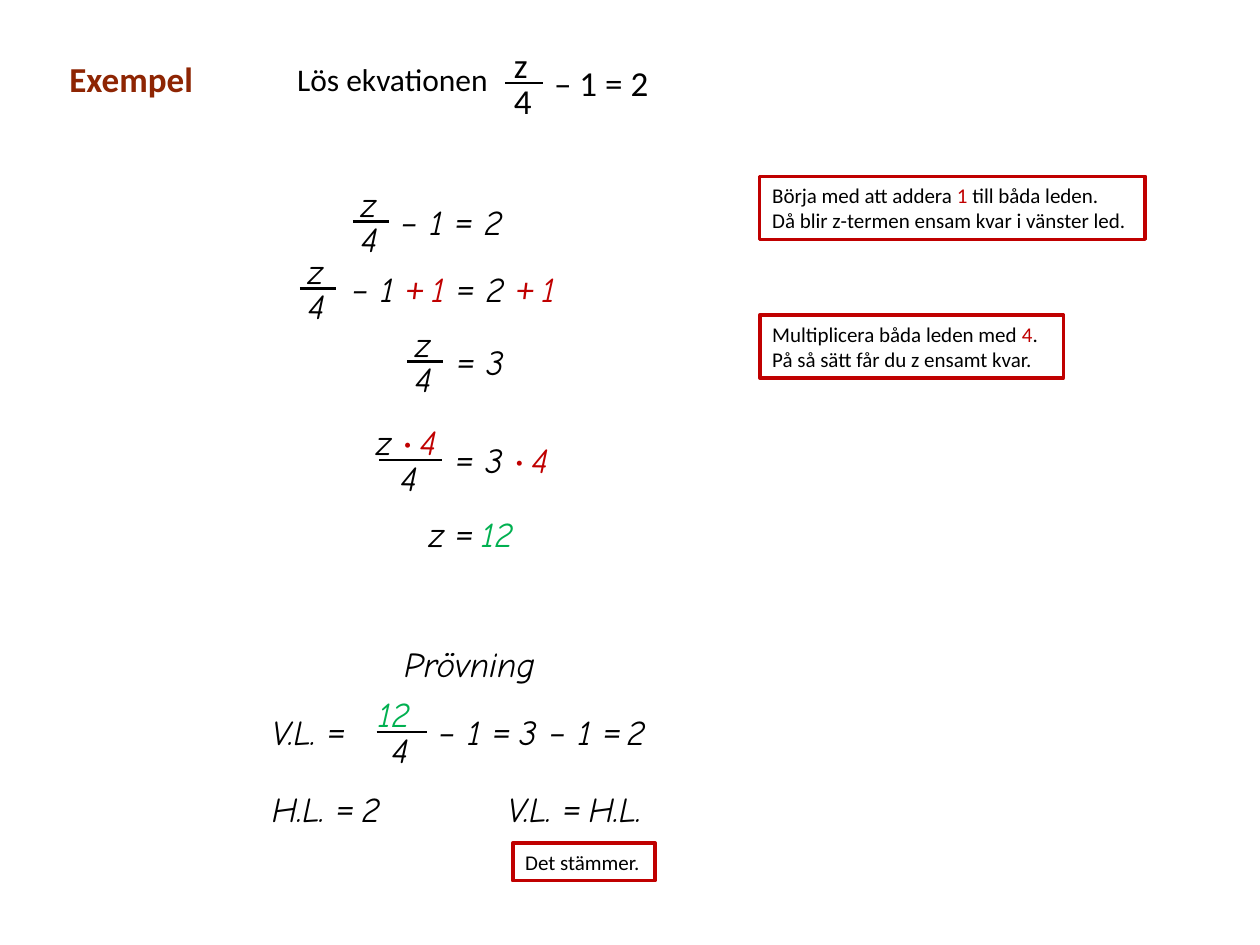
from dataclasses import dataclass

from lxml import etree
from pptx import Presentation
from pptx.dml.color import RGBColor
from pptx.enum.shapes import MSO_CONNECTOR, MSO_SHAPE
from pptx.enum.text import MSO_ANCHOR, MSO_AUTO_SIZE, PP_ALIGN
from pptx.oxml.ns import qn
from pptx.util import Inches, Pt

STRAIGHT = MSO_CONNECTOR.STRAIGHT
RECTANGLE = MSO_SHAPE.RECTANGLE
TOP = MSO_ANCHOR.TOP
LEFT = PP_ALIGN.LEFT
GROW = MSO_AUTO_SIZE.SHAPE_TO_FIT_TEXT
TITLE_ONLY = 5
OPERATORS = "–+=·"


@dataclass(frozen=True)
class Theme:
    ink: RGBColor = RGBColor(0, 0, 0)
    paper: RGBColor = RGBColor(255, 255, 255)
    heading: RGBColor = RGBColor(0x8E, 0x25, 0x03)
    change: RGBColor = RGBColor(0xC0, 0, 0)
    answer: RGBColor = RGBColor(0, 0xB0, 0x50)
    print_font: str = "Calibri"
    hand_font: str = "Comic Neue"
    math_size: Pt = Pt(20)
    task_size: Pt = Pt(18)
    hint_size: Pt = Pt(12)
    bar_width: Pt = Pt(1.5)
    frame_width: Pt = Pt(2)


THEME = Theme()
PRINTED = {"name": THEME.print_font, "size": THEME.math_size}
HANDWRITTEN = {"name": THEME.hand_font, "size": THEME.math_size, "italic": True}
HINT = {"name": THEME.print_font, "size": THEME.hint_size}
ROW_HEIGHT = 0.44


def apply(target, values):
    for attribute, value in values.items():
        setattr(target, attribute, value)


def red(text):
    return text, THEME.change


def green(text):
    return text, THEME.answer


def write(frame, lines, style, wrap=True):
    """Fill a frame; each line is a list of strings or (string, colour) pairs."""
    apply(frame, {"word_wrap": wrap, "auto_size": GROW, "vertical_anchor": TOP})
    for index, line in enumerate(lines):
        paragraph = frame.add_paragraph() if index else frame.paragraphs[0]
        paragraph.alignment = LEFT
        for part in line:
            text, color = part if isinstance(part, tuple) else (part, THEME.ink)
            run = paragraph.add_run()
            run.text = text
            apply(run.font, style)
            run.font.color.rgb = color
            # Handwritten formulas keep their operators in the print font
            if text[0] in OPERATORS:
                run.font.name = THEME.print_font


def add_formula(slide, left, top, width, parts, style=HANDWRITTEN, wrap=True):
    box = slide.shapes.add_textbox(
        Inches(left), Inches(top), Inches(width), Inches(ROW_HEIGHT))
    write(box.text_frame, [parts], style, wrap)


def add_fraction(slide, left, bar_y, width, rest, rest_width, rest_gap=0.0,
                 numerator=("z",), indent=0.03, style=HANDWRITTEN):
    """Place a fraction around its bar, followed by the rest of the equation."""
    right = left + width
    add_formula(slide, left - indent, bar_y - 0.36, width + 0.24, numerator, style)
    add_formula(slide, left + width / 2 - 0.18, bar_y - 0.08, 0.31, ["4"], style)
    bar = slide.shapes.add_connector(
        STRAIGHT, Inches(left), Inches(bar_y), Inches(right), Inches(bar_y))
    bar.line.color.rgb = THEME.ink
    bar.line.width = THEME.bar_width
    etree.SubElement(bar.element.spPr, qn("a:effectLst"))
    add_formula(slide, right + rest_gap, bar_y - 0.22, rest_width, rest, style)


def add_hint(slide, left, top, width, height, lines):
    hint = slide.shapes.add_shape(
        RECTANGLE, Inches(left), Inches(top), Inches(width), Inches(height))
    hint.shadow.inherit = False
    hint.fill.solid()
    hint.fill.fore_color.rgb = THEME.paper
    hint.line.color.rgb = THEME.change
    hint.line.width = THEME.frame_width
    write(hint.text_frame, lines, HINT)


def add_header(slide, left, top):
    title = slide.shapes.title
    apply(title, {"left": Inches(left), "top": Inches(top),
                  "width": Inches(1.19), "height": Inches(ROW_HEIGHT)})
    write(title.text_frame, [[("Exempel", THEME.heading)]],
          PRINTED | {"bold": True}, wrap=False)
    add_formula(slide, left + 1.81, top + 0.02, 1.74, ["Lös ekvationen"],
                PRINTED | {"size": THEME.task_size}, wrap=False)
    add_fraction(slide, left + 3.56, top + 0.25, 0.3, ["– 1 = 2"], 1.03,
                 rest_gap=-0.01, style=PRINTED)


def add_solution(slide, left, top):
    # Isolate the z term
    add_fraction(slide, left + 0.42, top + 0.36, 0.29,
                 ["–", " 1 ", "=", " 2"], 1.03, rest_gap=-0.01)
    add_fraction(slide, left, top + 0.89, 0.29,
                 ["–", " 1 ", red("+ "), red("1 "), "=", " 2 ", red("+ "), red("1")],
                 1.87, rest_gap=0.02)
    add_fraction(slide, left + 0.85, top + 1.47, 0.29, ["=", " 3"], 0.66,
                 rest_gap=0.01)
    # Multiply both sides
    add_fraction(slide, left + 0.63, top + 2.25, 0.5,
                 ["=", " 3 ", red("· "), red("4")], 0.98, rest_gap=0.01,
                 numerator=("z ", red("· "), red("4")), indent=0.12)
    add_formula(slide, left + 0.93, top + 2.62, 1.11, ["z ", "= ", green("12")])


def add_check(slide, left, top):
    add_formula(slide, left + 1.05, top, 1.36, ["Prövning"], wrap=False)
    # Left-hand side
    row = top + 0.54
    add_formula(slide, left, row, 1.01, ["V.L. ", "="])
    add_fraction(slide, left + 0.93, row + 0.22, 0.4, ["–", " 1 ", "="], 1.03,
                 rest_gap=-0.01, numerator=(green("12"),), indent=0.09)
    add_formula(slide, left + 1.87, row, 1.71, [" 3 ", "–", " 1 ", "="])
    add_formula(slide, left + 2.82, row, 0.6, ["2"])
    # Right-hand side and conclusion
    row = top + 1.15
    add_formula(slide, left, row, 1.41, ["H.L. ", "= ", "2"])
    add_formula(slide, left + 1.87, row, 1.64, ["V.L. ", "= ", "H.L."])
    add_hint(slide, left + 2.01, top + 1.64, 1.13, 0.3, [["Det stämmer."]])


def add_hints(slide, left, top):
    add_hint(slide, left, top, 3.06, 0.5, [
        ["Börja med att addera", red(" 1 "), "till båda leden."],
        ["Då blir z-termen ensam kvar i vänster led."]])
    add_hint(slide, left, top + 1.1, 2.41, 0.5, [
        ["Multiplicera båda leden med ", red("4"), "."],
        ["På så sätt får du z ensamt kvar."]])


def main():
    deck = Presentation()
    apply(deck, {"slide_width": Inches(10), "slide_height": Inches(7.5)})
    slide = deck.slides.add_slide(deck.slide_layouts[TITLE_ONLY])
    add_header(slide, 0.45, 0.41)
    add_solution(slide, 2.38, 1.4)
    add_hints(slide, 6.03, 1.4)
    add_check(slide, 2.06, 5.05)
    deck.save("out.pptx")


if __name__ == "__main__":
    main()
